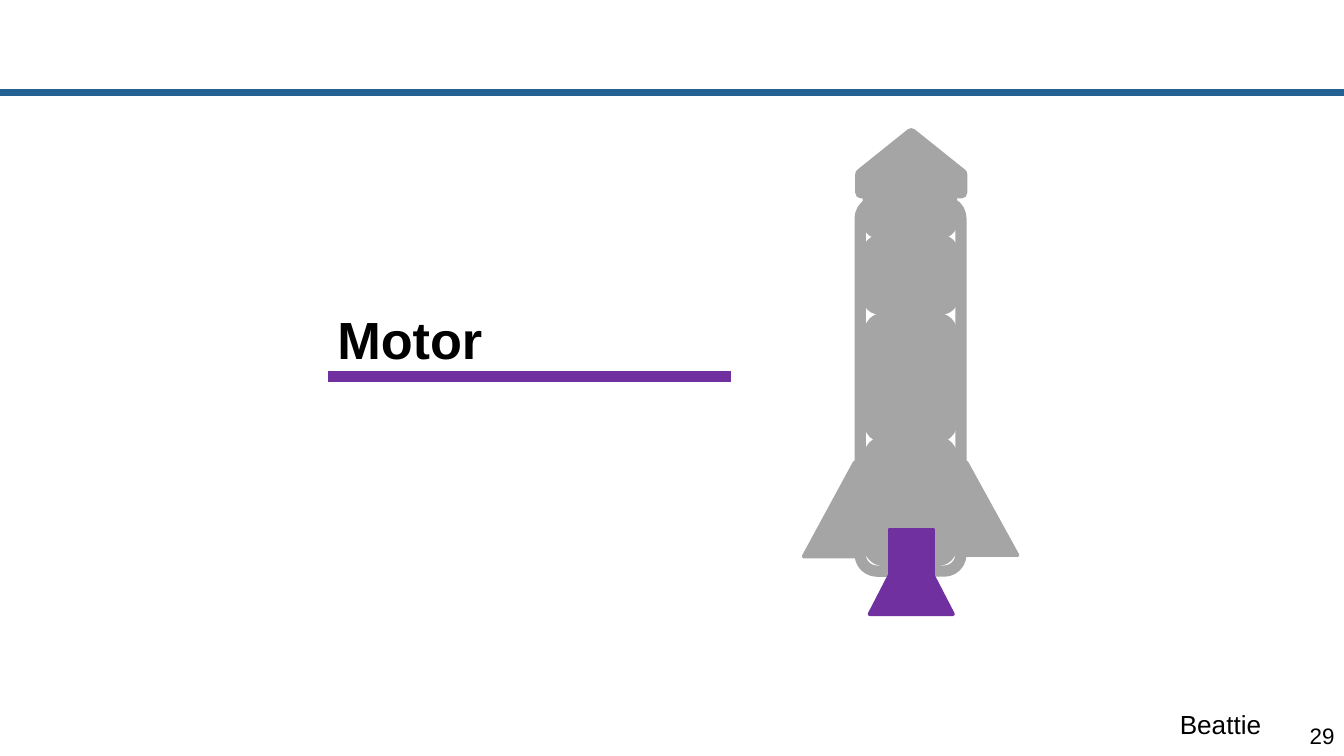
import pptx
import pptx.util
import pptx.dml.color
import pptx.enum.shapes
import pptx.enum.text
import pptx.oxml.ns
import lxml.etree

Inches = pptx.util.Inches
Pt = pptx.util.Pt
Kind = pptx.enum.shapes.MSO_SHAPE
Anchor = pptx.enum.text.MSO_ANCHOR
Align = pptx.enum.text.PP_ALIGN
Fit = pptx.enum.text.MSO_AUTO_SIZE

GREY = "A5A5A5"
PURPLE = "7030A0"
BLUE = "236192"
BLACK = "000000"
INSET = {"margin_left": Inches(0.07), "margin_right": Inches(0.07),
         "margin_top": Inches(0.04), "margin_bottom": Inches(0.04)}


def paint(part, color):
    part.solid()
    part.fore_color.rgb = pptx.dml.color.RGBColor.from_string(color)


def apply(target, values):
    for name, value in values.items():
        setattr(target, name, value)


def add_line(slide, start, end, color, width):
    line = slide.shapes.add_connector(
        pptx.enum.shapes.MSO_CONNECTOR.STRAIGHT,
        *(Inches(v) for v in (*start, *end)))
    paint(line.line.fill, color)
    line.line.width = Pt(width)
    lxml.etree.SubElement(line._element.spPr, pptx.oxml.ns.qn("a:effectLst"))


def add_part(slide, kind, box, color, width, adjust=None, turn=0, filled=True):
    part = slide.shapes.add_shape(kind, *(Inches(v) for v in box))
    part.rotation = turn
    if adjust is not None:
        part.adjustments[0] = adjust
    if filled:
        paint(part.fill, color)
    else:
        part.fill.background()
    paint(part.line.fill, color)
    part.line.width = Pt(width)
    edge = part.line._get_or_add_ln()
    lxml.etree.SubElement(edge, pptx.oxml.ns.qn("a:round"))
    part.shadow.inherit = False


def add_text(slide, box, text, size, frame, para=None, bold=False):
    shape = slide.shapes.add_textbox(*(Inches(v) for v in box))
    body = shape.text_frame
    apply(body, {"word_wrap": True, **frame})
    first = body.paragraphs[0]
    apply(first, para or {})
    run = first.add_run()
    run.text = text
    apply(run.font, {"name": "Arial", "size": Pt(size), "bold": bold})
    paint(run.font.fill, BLACK)


def add_frame(slide, width, height):
    add_line(slide, (0, 0.69), (width, 0.69), BLUE, 3.5)
    add_text(slide, (width - 0.5, height - 0.3, 0.5, 0.3), "29", 12,
             {**INSET, "vertical_anchor": Anchor.MIDDLE},
             {"alignment": Align.RIGHT})
    add_text(slide, (width - 1.32, height - 0.4, 0.93, 0.34), "Beattie", 14,
             {"auto_size": Fit.SHAPE_TO_FIT_TEXT})


def add_title(slide, left, top):
    base = top + 0.5
    add_line(slide, (left, base), (left + 3, base), PURPLE, 6)
    add_text(slide, (left, top, 2.88, 0.5), "Motor", 28, INSET,
             {"line_spacing": 0.9}, True)


def add_rocket(slide, left, top):
    def place(x, y, wide, high):
        return left + x, top + y, wide, high

    def add_bay(x, y, wide, high, filled=True):
        add_part(slide, Kind.ROUNDED_RECTANGLE, place(x, y, wide, high),
                 GREY, 6, 0.167, filled=filled)

    add_bay(0.47, 2.29, 0.61, 0.88)
    add_bay(0.47, 1.37, 0.61, 0.88)
    for x, y in ((0.72, 2.09), (0.84, 2.1)):
        add_line(slide, (left + x, top + y), (left + x, top + y + 0.3), GREY, 6)
    for box, turn in (((1.19, 2.44, 0.38, 0.69), 0),
                      ((-0.18, 2.6, 0.7, 0.38), 270)):
        add_part(slide, Kind.RIGHT_TRIANGLE, place(*box), GREY, 2, turn=turn)
    add_bay(0.46, 0.79, 0.63, 0.51)
    add_bay(0.46, 0.32, 0.62, 0.41)
    add_bay(0.4, 0.5, 0.75, 2.75, False)
    add_part(slide, Kind.PENTAGON, place(0.56, -0.16, 0.44, 0.75),
             GREY, 6, 0.683, 270)
    add_part(slide, Kind.ISOSCELES_TRIANGLE, place(0.47, 2.97, 0.62, 0.6),
             PURPLE, 2)
    add_part(slide, Kind.RECTANGLE, place(0.62, 2.94, 0.32, 0.4), PURPLE, 2)


def main():
    deck = pptx.Presentation()
    width = 10
    height = width * 9 / 16
    apply(deck, {"slide_width": Inches(width), "slide_height": Inches(height)})
    slide = deck.slides.add_slide(deck.slide_layouts[6])
    paint(slide.background.fill, "FFFFFF")
    add_frame(slide, width, height)
    add_title(slide, 2.44, 2.3)
    add_rocket(slide, 6, 1)
    deck.save("out.pptx")


if __name__ == "__main__":
    main()
